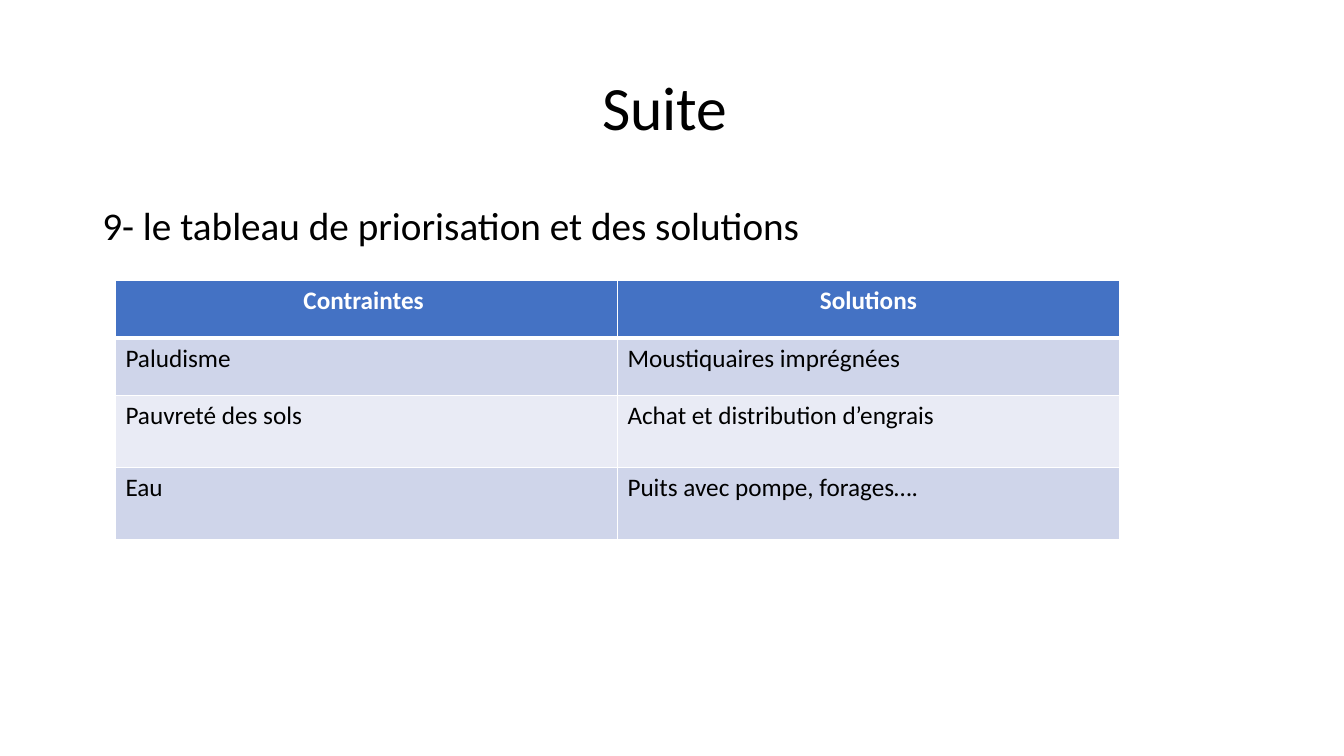
from lxml import etree
from pptx import Presentation
from pptx.dml.color import RGBColor
from pptx.enum.text import MSO_ANCHOR, PP_ALIGN
from pptx.oxml.ns import qn
from pptx.util import Cm, Pt

CENTER, LEFT = PP_ALIGN.CENTER, PP_ALIGN.LEFT
TOP, MIDDLE = MSO_ANCHOR.TOP, MSO_ANCHOR.MIDDLE

TITLE = "Suite "
SUBTITLE = "9- le tableau de priorisation et des solutions"
ROWS = [
    ("Contraintes ", " Solutions "),
    ("Paludisme", "Moustiquaires imprégnées"),
    ("Pauvreté des sols", "Achat et distribution d’engrais"),
    ("Eau", "Puits avec pompe, forages…."),
]
ROW_HEIGHTS = [1.45, 1.45, 1.82, 1.81]
COL_WIDTH = 12.65
TABLE_LEFT, TABLE_TOP = 2.91, 7.07

THEME = {
    "font": "Calibri", "text": "000000", "light": "FFFFFF",
    "header": "4472C4", "bands": ("CFD5EA", "E9EBF5"),
    "title": 44, "body": 28, "cell": 18, "rule": 1, "header_rule": 3,
}


def write(tf, text, size, color=THEME["text"], bold=False, align=LEFT,
          spacing=None, before=0):
    p = tf.paragraphs[0]
    p.alignment = align
    p.space_before = Pt(before)
    if spacing:
        p.line_spacing = spacing
    r = p.add_run()
    r.text = text
    r.font.name = THEME["font"]
    r.font.size = Pt(size)
    r.font.bold = bold
    r.font.color.rgb = RGBColor.from_string(color)


def add_text(s, top, height, anchor, text, **style):
    tf = s.shapes.add_textbox(Cm(2.33), Cm(top), Cm(29.21), Cm(height)).text_frame
    tf.word_wrap = True
    tf.vertical_anchor = anchor
    write(tf, text, spacing=0.9, **style)


def set_borders(cell, top, bottom):
    """Rule all four sides; borders must come before the fill in tcPr."""
    tc_pr = cell._tc.get_or_add_tcPr()
    widths = {"L": THEME["rule"], "R": THEME["rule"], "T": top, "B": bottom}
    for i, (side, width) in enumerate(widths.items()):
        ln = etree.Element(qn(f"a:ln{side}"), w=str(Pt(width)))
        fill = etree.SubElement(ln, qn("a:solidFill"))
        etree.SubElement(fill, qn("a:srgbClr"), val=THEME["light"])
        tc_pr.insert(i, ln)


def add_solutions_table(s):
    table = s.shapes.add_table(
        len(ROWS), len(ROWS[0]), Cm(TABLE_LEFT), Cm(TABLE_TOP),
        Cm(COL_WIDTH * len(ROWS[0])), Cm(sum(ROW_HEIGHTS))).table
    for col in table.columns:
        col.width = Cm(COL_WIDTH)
    for i, (texts, height) in enumerate(zip(ROWS, ROW_HEIGHTS)):
        table.rows[i].height = Cm(height)
        header = i == 0
        fill = THEME["header"] if header else THEME["bands"][(i - 1) % 2]
        for j, text in enumerate(texts):
            cell = table.cell(i, j)
            cell.fill.solid()
            cell.fill.fore_color.rgb = RGBColor.from_string(fill)
            set_borders(cell,
                        THEME["header_rule"] if i == 1 else THEME["rule"],
                        THEME["header_rule"] if header else THEME["rule"])
            write(cell.text_frame, text, THEME["cell"], bold=header,
                  color=THEME["light"] if header else THEME["text"],
                  align=CENTER if header else LEFT)


def main():
    prs = Presentation()
    prs.slide_width, prs.slide_height = Cm(33.87), Cm(19.05)
    s = prs.slides.add_slide(prs.slide_layouts[6])
    add_text(s, 0.95, 3.68, MIDDLE, TITLE, size=THEME["title"], align=CENTER)
    add_text(s, 5.08, 10.28, TOP, SUBTITLE, size=THEME["body"], before=10)
    add_solutions_table(s)
    prs.save("out.pptx")


if __name__ == "__main__":
    main()
